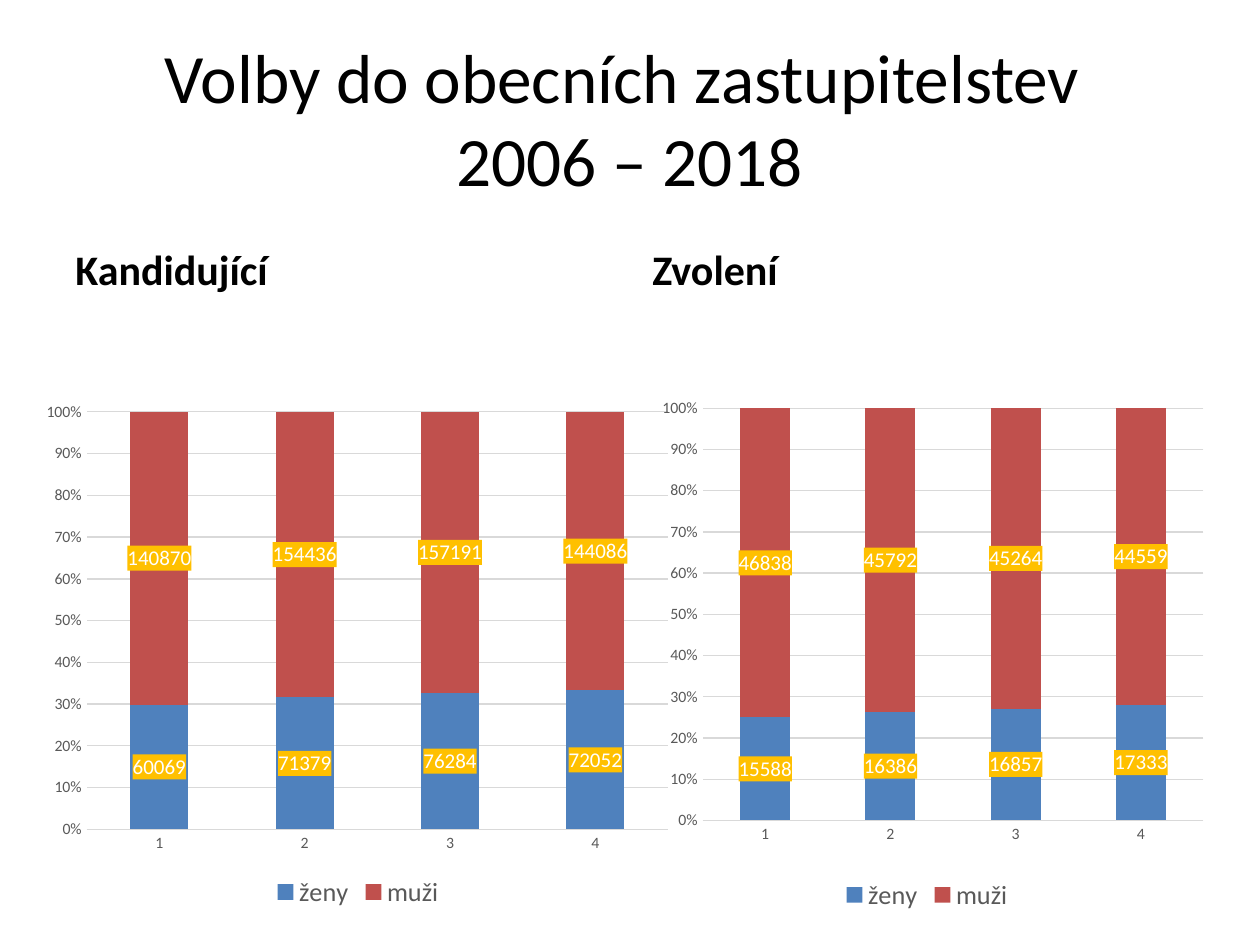
from lxml import etree
from pptx import Presentation
from pptx import util as u
from pptx.chart.data import CategoryChartData
from pptx.dml.color import RGBColor
from pptx.enum import chart as charts, text
from pptx.oxml import parse_xml
from pptx.oxml.ns import nsdecls, qn

PX = 914400 // 126
FONT = "Calibri"
BLACK = RGBColor(0x00, 0x00, 0x00)
WHITE = RGBColor(0xFF, 0xFF, 0xFF)
GRAY = RGBColor(0x59, 0x59, 0x59)
GRID = RGBColor(0xD9, 0xD9, 0xD9)
BLUE = RGBColor(0x4F, 0x81, 0xBD)
RED = RGBColor(0xC0, 0x50, 0x4D)
AMBER = RGBColor(0xFF, 0xC0, 0x00)

SIZE = (1260, 945)
TITLE = "Volby do obecních zastupitelstev \v2006 – 2018"
TITLE_BOX = (63, 38, 1134, 158)
CATEGORIES = ["1", "2", "3", "4"]
SERIES_COLORS = {"ženy": BLUE, "muži": RED}
PANELS = [
    {
        "heading": "Kandidující",
        "heading_box": (63, 212, 557, 88),
        "chart_box": (35, 391, 646, 522),
        "plot": (0.08, 0.04, 0.9, 0.8),
        "values": {
            "ženy": (60069, 71379, 76284, 72052),
            "muži": (140870, 154436, 157191, 144086),
        },
    },
    {
        "heading": "Zvolení",
        "heading_box": (640, 212, 557, 88),
        "chart_box": (643, 316, 568, 600),
        "plot": (0.105, 0.154, 0.882, 0.687),
        "values": {
            "ženy": (15588, 16386, 16857, 17333),
            "muži": (46838, 45792, 45264, 44559),
        },
    },
]


def apply(target, values):
    for name, value in values.items():
        setattr(target, name, value)


def style_font(font, size, color, bold=False):
    apply(font, {"name": FONT, "size": u.Pt(size), "bold": bold})
    font.color.rgb = color


def emu(box):
    return [length * PX for length in box]


def add_text(slide, box, content, size, bold, anchor, align):
    frame = slide.shapes.add_textbox(*emu(box)).text_frame
    apply(frame, {"word_wrap": True, "vertical_anchor": anchor})
    paragraph = frame.paragraphs[0]
    apply(paragraph, {"text": content, "alignment": align})
    for run in paragraph.runs:
        style_font(run.font, size, BLACK, bold)


def set_plot_layout(chart, plot):
    area = chart._chartSpace.chart.plotArea
    for layout in area.findall(qn("c:layout")):
        area.remove(layout)
    layout = parse_xml(f"<c:layout {nsdecls('c')}><c:manualLayout/></c:layout>")
    settings = [("layoutTarget", "inner"), ("xMode", "edge"), ("yMode", "edge")]
    for name, value in settings + list(zip("xywh", plot)):
        etree.SubElement(layout[0], qn(f"c:{name}")).set("val", str(value))
    area.insert(0, layout)


def style_axes(chart):
    for axis in (chart.category_axis, chart.value_axis):
        apply(axis, {
            "major_tick_mark": charts.XL_TICK_MARK.NONE,
            "minor_tick_mark": charts.XL_TICK_MARK.NONE,
        })
        style_font(axis.tick_labels.font, 9, GRAY)
    values = chart.value_axis
    values.has_major_gridlines = True
    apply(values, {"minimum_scale": 0, "maximum_scale": 1, "major_unit": 0.1})
    apply(values.tick_labels, {"number_format": "0%", "number_format_is_linked": False})
    values.format.line.fill.background()
    for line in (values.major_gridlines.format.line, chart.category_axis.format.line):
        line.color.rgb = GRID
        line.width = u.Pt(0.75)


def style_series(series):
    series.format.fill.solid()
    series.format.fill.fore_color.rgb = SERIES_COLORS[series.name]
    series.invert_if_negative = False
    labels = series.data_labels
    apply(labels, {
        "show_value": True,
        "number_format": "0",
        "number_format_is_linked": False,
        "position": charts.XL_LABEL_POSITION.CENTER,
    })
    style_font(labels.font, 12, WHITE)
    fill = parse_xml(
        f'<c:spPr {nsdecls("c", "a")}><a:solidFill><a:srgbClr val="{AMBER}"/>'
        "</a:solidFill><a:ln><a:noFill/></a:ln></c:spPr>"
    )
    labels._element.find(qn("c:txPr")).addprevious(fill)


def add_chart(slide, panel):
    data = CategoryChartData(number_format="0")
    data.categories = CATEGORIES
    for name, values in panel["values"].items():
        data.add_series(name, values)
    chart = slide.shapes.add_chart(
        charts.XL_CHART_TYPE.COLUMN_STACKED_100, *emu(panel["chart_box"]), data
    ).chart
    apply(chart, {"has_title": False, "has_legend": True})
    style_font(chart.font, 10, BLACK)
    apply(chart.legend, {
        "position": charts.XL_LEGEND_POSITION.BOTTOM,
        "include_in_layout": False,
    })
    style_font(chart.legend.font, 15, GRAY)
    apply(chart.plots[0], {"gap_width": 150, "overlap": 100, "vary_by_categories": False})
    style_axes(chart)
    for series in chart.plots[0].series:
        style_series(series)
    set_plot_layout(chart, panel["plot"])


def main():
    presentation = Presentation()
    presentation.slide_width, presentation.slide_height = emu(SIZE)
    slide = presentation.slides.add_slide(presentation.slide_layouts[6])
    add_text(slide, TITLE_BOX, TITLE, 39.6, False,
             text.MSO_ANCHOR.MIDDLE, text.PP_ALIGN.CENTER)
    for panel in PANELS:
        add_text(slide, panel["heading_box"], panel["heading"], 24, True,
                 text.MSO_ANCHOR.BOTTOM, text.PP_ALIGN.LEFT)
    for panel in PANELS:
        add_chart(slide, panel)
    presentation.save("out.pptx")


if __name__ == "__main__":
    main()
